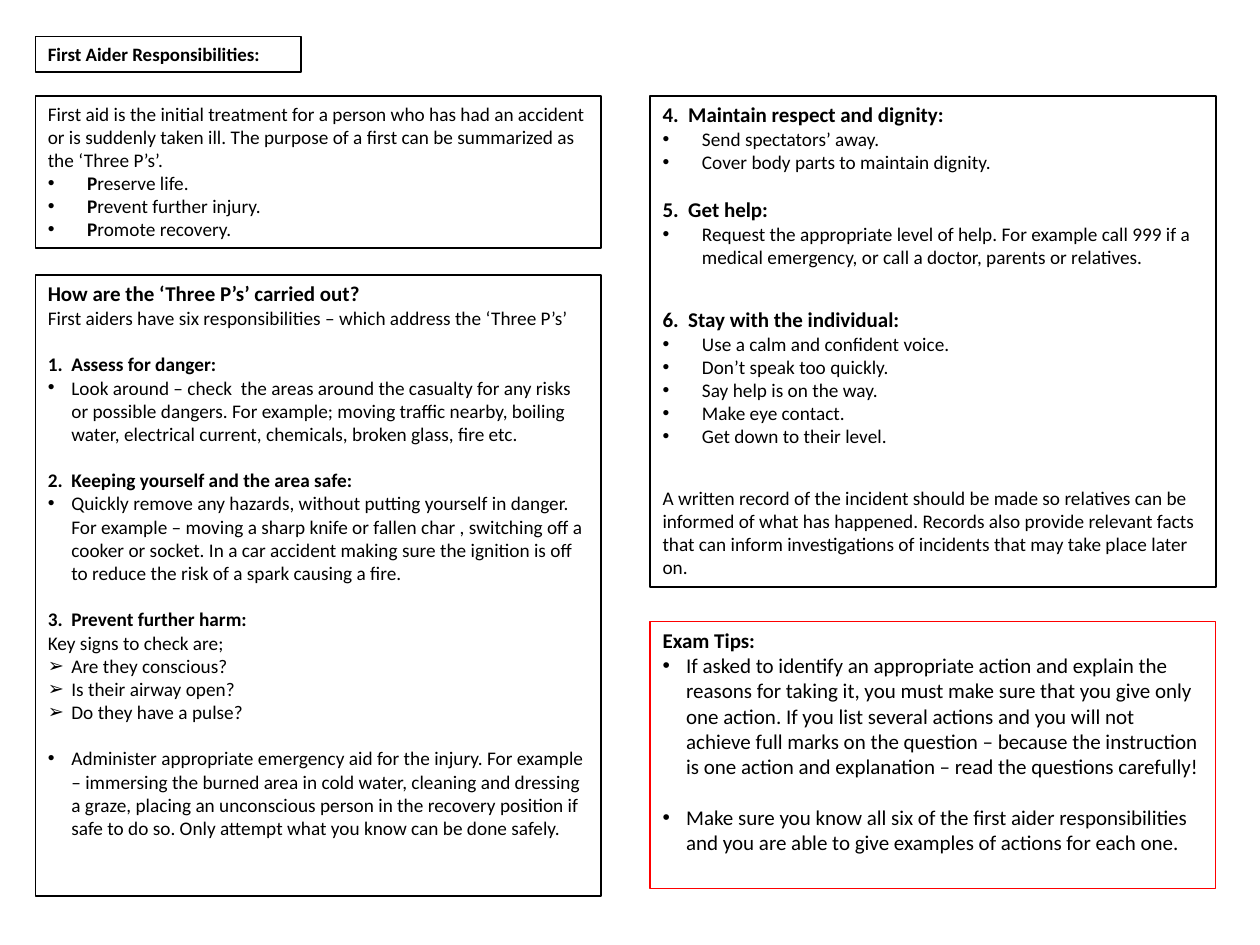
from lxml import etree
from pptx import Presentation
from pptx.dml.color import RGBColor
from pptx.enum.shapes import MSO_SHAPE
from pptx.enum.text import MSO_ANCHOR, PP_ALIGN
from pptx.oxml.ns import qn
from pptx.util import Pt

RECTANGLE = MSO_SHAPE.RECTANGLE
TOP, MIDDLE = MSO_ANCHOR.TOP, MSO_ANCHOR.MIDDLE
LEFT = PP_ALIGN.LEFT

COLORS = {"ink": "000000", "paper": "FFFFFF", "tips": "FF0000"}
FONT = "Calibri"
NARROW, WIDE = 13.5, 22.5
SMALL_GAP, TIPS_GAP, LARGE_GAP = 13.4, 14.6, 22
LEFT_COLUMN, RIGHT_COLUMN, COLUMN_WIDTH = 20.2, 371.5, 323.3


def rgb(name):
    """Return the palette colour with the given name."""
    return RGBColor.from_string(COLORS[name])


def line(text, size=11, bold=False, bullet=None, indent=0, gap=0, lead=0):
    """Describe one paragraph, whose first lead letters are bold."""
    runs = [(text[:lead], True), (text[lead:], bold)]
    return {"runs": [run for run in runs if run[0]], "size": size,
            "bullet": bullet, "indent": indent, "gap": gap}


def heading(text, size=12, gap=0):
    """Describe a bold heading."""
    return line(text, size, bold=True, gap=gap)


def bullets(texts, indent, size=11, mark="•", gap=0, lead=0):
    """Describe a bulleted list with a gap above its first item."""
    return [line(text, size, False, mark, indent, 0 if i else gap, lead)
            for i, text in enumerate(texts)]


def set_bullet(paragraph, mark, indent):
    """Give a paragraph a hanging bullet."""
    properties = paragraph._p.get_or_add_pPr()
    properties.set("marL", str(Pt(indent)))
    properties.set("indent", str(-Pt(indent)))
    etree.SubElement(properties, qn("a:buFont")).set("typeface", "Arial")
    etree.SubElement(properties, qn("a:buChar")).set("char", mark)


def add_panel(slide, box, lines, border="ink", weight=1, filled=True, anchor=TOP):
    """Draw a bordered panel in the box and write its lines."""
    panel = slide.shapes.add_shape(RECTANGLE, *map(Pt, box))
    panel.shadow.inherit = False
    if filled:
        panel.fill.solid()
        panel.fill.fore_color.rgb = rgb("paper")
    else:
        panel.fill.background()
    panel.line.color.rgb = rgb(border)
    panel.line.width = Pt(weight)
    frame = panel.text_frame
    frame.word_wrap = True
    frame.vertical_anchor = anchor
    for i, entry in enumerate(lines):
        paragraph = frame.add_paragraph() if i else frame.paragraphs[0]
        paragraph.alignment = LEFT
        paragraph.space_before = Pt(entry["gap"])
        if entry["bullet"]:
            set_bullet(paragraph, entry["bullet"], entry["indent"])
        for text, bold in entry["runs"]:
            run = paragraph.add_run()
            run.text = text
            run.font.name = FONT
            run.font.size = Pt(entry["size"])
            run.font.bold = bold
            run.font.color.rgb = rgb("ink")


def add_title(slide, box):
    """Place the slide title."""
    add_panel(slide, box, [heading("First Aider Responsibilities:", 10.8)], anchor=MIDDLE)


def add_purpose(slide, box):
    """Place the definition of first aid and the Three P's."""
    add_panel(slide, box, [
        line("First aid is the initial treatment for a person who has had an accident "
             "or is suddenly taken ill. The purpose of a first can be summarized as "
             "the ‘Three P’s’."),
        *bullets(["Preserve life.", "Prevent further injury.", "Promote recovery."],
                 WIDE, lead=1),
    ])


def add_first_responsibilities(slide, box):
    """Place responsibilities one to three."""
    add_panel(slide, box, [
        heading("How are the ‘Three P’s’ carried out?"),
        line("First aiders have six responsibilities – which address the ‘Three P’s’"),
        heading("1.  Assess for danger:", 11, SMALL_GAP),
        *bullets(["Look around – check  the areas around the casualty for any risks or "
                  "possible dangers. For example; moving traffic nearby, boiling water, "
                  "electrical current, chemicals, broken glass, fire etc."], NARROW),
        heading("2.  Keeping yourself and the area safe:", 11, SMALL_GAP),
        *bullets(["Quickly remove any hazards, without putting yourself in danger. For "
                  "example – moving a sharp knife or fallen char , switching off a cooker "
                  "or socket. In a car accident making sure the ignition is off to reduce "
                  "the risk of a spark causing a fire."], NARROW),
        heading("3.  Prevent further harm:", 11, SMALL_GAP),
        line("Key signs to check are;"),
        *bullets(["Are they conscious?", "Is their airway open?", "Do they have a pulse?"],
                 NARROW, mark="➢"),
        *bullets(["Administer appropriate emergency aid for the injury. For example – "
                  "immersing the burned area in cold water, cleaning and dressing a graze, "
                  "placing an unconscious person in the recovery position if safe to do "
                  "so. Only attempt what you know can be done safely."],
                 NARROW, gap=SMALL_GAP),
    ])


def add_last_responsibilities(slide, box):
    """Place responsibilities four to six and the note on records."""
    add_panel(slide, box, [
        heading("4.  Maintain respect and dignity:"),
        *bullets(["Send spectators’ away.", "Cover body parts to maintain dignity."], WIDE),
        heading("5.  Get help:", gap=SMALL_GAP),
        *bullets(["Request the appropriate level of help. For example call 999 if a "
                  "medical emergency, or call a doctor, parents or relatives."], WIDE),
        heading("6.  Stay with the individual:", gap=LARGE_GAP),
        *bullets(["Use a calm and confident voice.", "Don’t speak too quickly.",
                  "Say help is on the way.", "Make eye contact.",
                  "Get down to their level."], WIDE),
        line("A written record of the incident should be made so relatives can be "
             "informed of what has happened. Records also provide relevant facts that "
             "can inform investigations of incidents that may take place later on.",
             gap=LARGE_GAP),
    ])


def add_exam_tips(slide, box):
    """Place the exam tips."""
    add_panel(slide, box, [
        heading("Exam Tips:"),
        *bullets(["If asked to identify an appropriate action and explain the reasons for "
                  "taking it, you must make sure that you give only one action. If you "
                  "list several actions and you will not achieve full marks on the "
                  "question – because the instruction is one action and explanation – "
                  "read the questions carefully!"], NARROW, 12),
        *bullets(["Make sure you know all six of the first aider responsibilities and you "
                  "are able to give examples of actions for each one."],
                 NARROW, 12, gap=TIPS_GAP),
    ], border="tips", weight=0.75, filled=False)


def main():
    """Build and save the slide."""
    deck = Presentation()
    deck.slide_width, deck.slide_height = Pt(720), Pt(540)
    slide = deck.slides.add_slide(deck.slide_layouts[6])
    add_title(slide, (LEFT_COLUMN, 20.9, 151.9, 20.2))
    add_purpose(slide, (LEFT_COLUMN, 54.7, COLUMN_WIDTH, 87.1))
    add_first_responsibilities(slide, (LEFT_COLUMN, 157, COLUMN_WIDTH, 355))
    add_last_responsibilities(slide, (RIGHT_COLUMN, 54.7, COLUMN_WIDTH, 280.8))
    add_exam_tips(slide, (RIGHT_COLUMN, 355, COLUMN_WIDTH, 152.6))
    deck.save("out.pptx")


if __name__ == "__main__":
    main()
